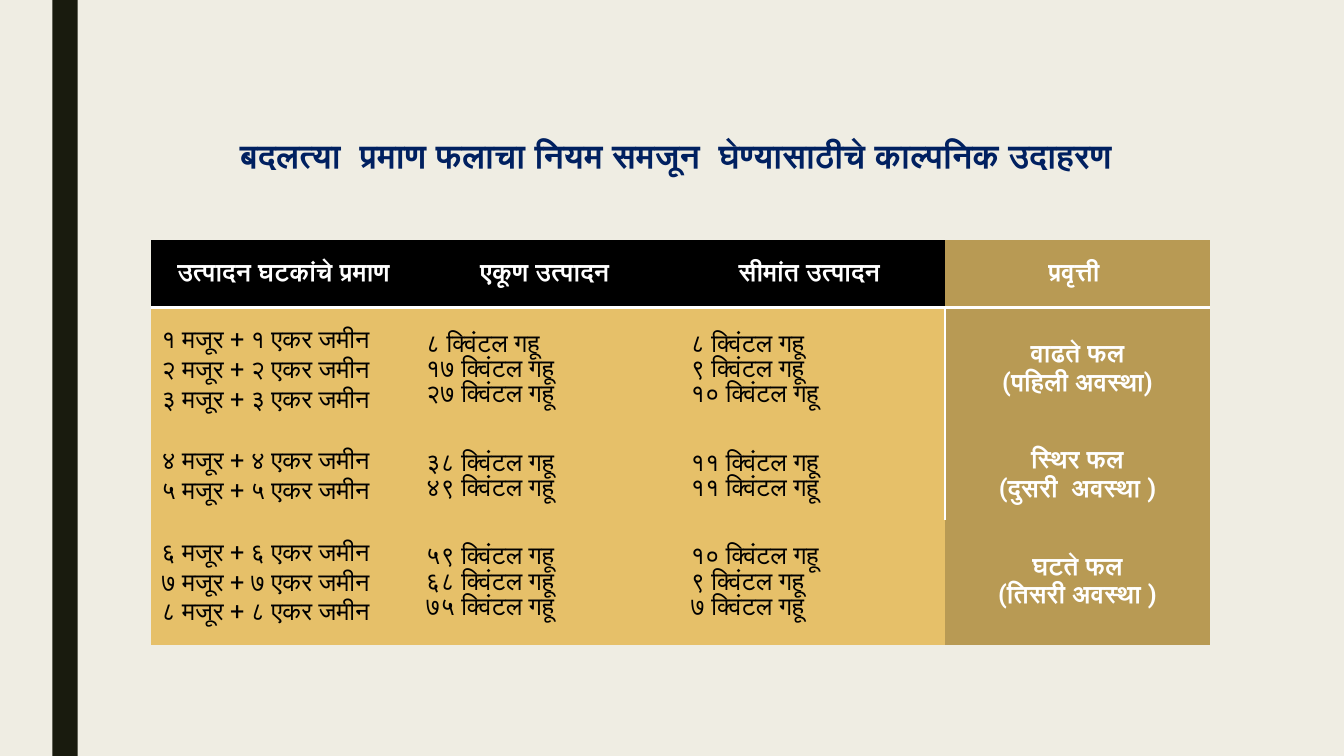
from lxml.etree import SubElement
from pptx import Presentation
from pptx.dml.color import RGBColor as Rgb
from pptx.enum.shapes import MSO_SHAPE as Shape
from pptx.enum.text import MSO_ANCHOR as Anchor, PP_ALIGN as Align
from pptx.oxml import parse_xml
from pptx.oxml.ns import nsdecls, qn
from pptx.util import Inches, Pt

# Content
TITLE = "बदलत्या  प्रमाण फलाचा नियम समजून  घेण्यासाठीचे काल्पनिक उदाहरण "
HEADS = ["उत्पादन घटकांचे प्रमाण", "एकूण उत्पादन ", "सीमांत उत्पादन ", "प्रवृत्ती "]
UNIT = "क्विंटल गहू"
# Inputs, total output, marginal output, stage
STAGES = [
    ("१२३", ["८", "१७", "२७"], ["८", "९", "१०"], ["वाढते फल", "(पहिली अवस्था)"]),
    ("४५", ["३८", "४९"], ["११", "११"], ["स्थिर फल", "(दुसरी  अवस्था )"]),
    ("६७८", ["५९", "६८", "७५"], ["१०", "९", "७"], ["घटते फल", "(तिसरी अवस्था )"]),
]
HIGHS = [0.67, 1.24, 0.87, 1.24]
WIDE = 10.5
COLORS = {
    "back": "EFEDE3", "bar": "191B0E", "title": "002060", "head": "000000",
    "body": "E6C069", "stage": "B89A54", "white": "FFFFFF", "black": "000000",
}
NO_STYLE = "{2D5ABB26-0587-4C30-8999-92F81FD0307C}"


def color(name):
    return Rgb.from_string(COLORS[name])


def write(frame, lines, size=18, ink="black", bold=False, align=Align.LEFT, space=None):
    frame.word_wrap = True
    for i, line in enumerate(lines):
        par = frame.paragraphs[0] if i == 0 else frame.add_paragraph()
        par.alignment = align
        if space:
            par.line_spacing = space
        run = par.add_run()
        run.text = line
        font = run.font
        font.name, font.size, font.bold = "Roboto", Pt(size), bold
        font.color.rgb = color(ink)


def edge(cell, side):
    line = parse_xml(f'<a:{side} {nsdecls("a")} w="{Pt(2)}"/>')
    fill = SubElement(line, qn("a:solidFill"))
    SubElement(fill, qn("a:srgbClr"), val=COLORS["white"])
    cell._tc.get_or_add_tcPr().insert(0, line)


deck = Presentation()
deck.slide_width, deck.slide_height = Inches(13.33), Inches(7.5)
slide = deck.slides.add_slide(deck.slide_layouts[6])
slide.background.fill.solid()
slide.background.fill.fore_color.rgb = color("back")

# Side bar
bar = slide.shapes.add_shape(Shape.RECTANGLE, Inches(0.52), 0, Inches(0.25), Inches(7.5))
bar.shadow.inherit = False
bar.fill.solid()
bar.fill.fore_color.rgb = color("bar")
bar.line.fill.background()

# Title
box = slide.shapes.add_textbox(Inches(1.5), Inches(0.75), Inches(WIDE), Inches(1.62))
box.text_frame.vertical_anchor = Anchor.MIDDLE
write(box.text_frame, [TITLE], size=24, ink="title", bold=True, align=Align.CENTER, space=0.89)

# Table
rows = [[[head] for head in HEADS]]
for inputs, total, extra, stage in STAGES:
    rows.append([
        [f"{n} मजूर + {n} एकर जमीन" for n in inputs],
        [f"{n} {UNIT}" for n in total],
        [f"{n} {UNIT}" for n in extra],
        stage,
    ])
last = len(HEADS) - 1
table = slide.shapes.add_table(
    len(rows), len(HEADS), Inches(1.5), Inches(2.38), Inches(WIDE), Inches(sum(HIGHS))
).table
table._tbl.tblPr.find(qn("a:tableStyleId")).text = NO_STYLE
for col in table.columns:
    col.width = Inches(WIDE / len(HEADS))
for r, (high, row) in enumerate(zip(HIGHS, rows)):
    table.rows[r].height = Inches(high)
    for c, lines in enumerate(row):
        cell = table.cell(r, c)
        cell.vertical_anchor = Anchor.MIDDLE
        cell.fill.solid()
        cell.fill.fore_color.rgb = color("stage" if c == last else "body" if r else "head")
        if r == 0 or c == last:
            write(cell.text_frame, lines, ink="white", bold=True, align=Align.CENTER)
        else:
            write(cell.text_frame, lines)
        if r == 0:
            edge(cell, "lnB")
        elif c == last and r < len(STAGES):
            edge(cell, "lnL")

deck.save("out.pptx")
